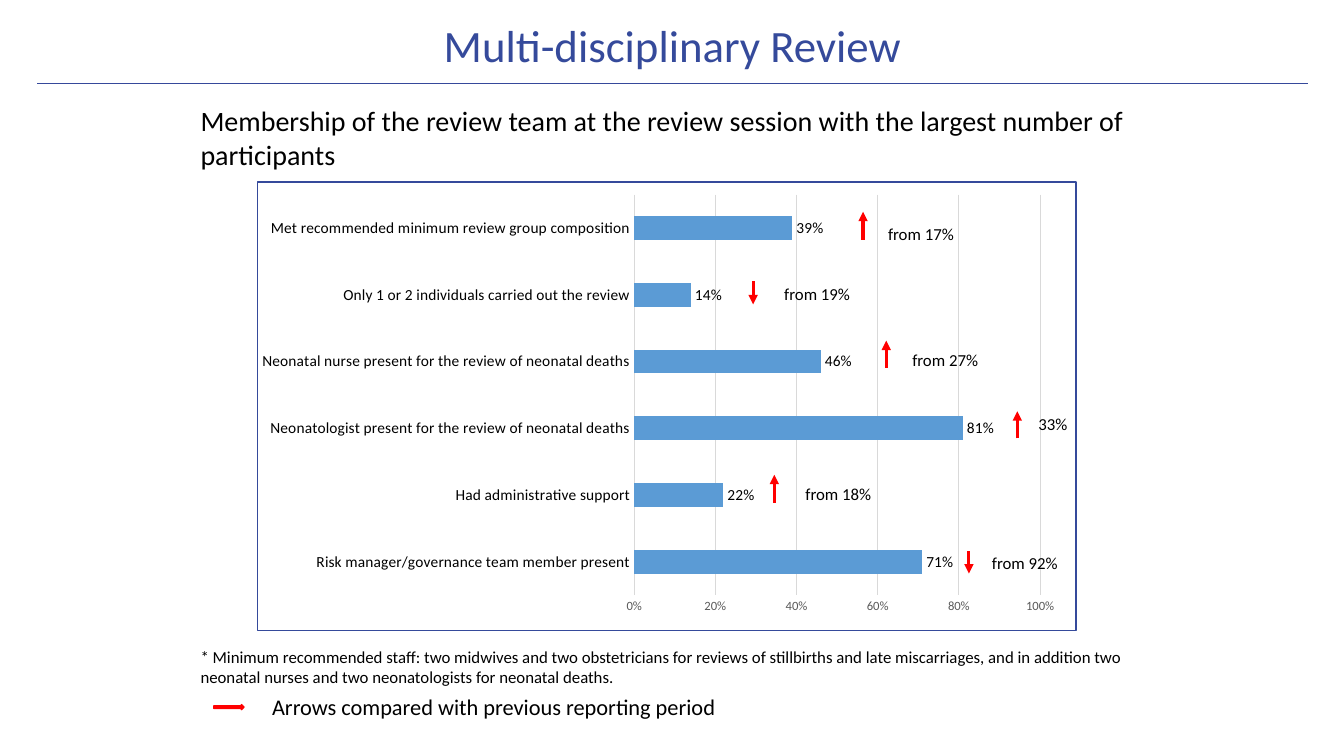
from dataclasses import dataclass

from lxml import etree
from pptx import Presentation
from pptx import util as u
from pptx.chart.data import CategoryChartData
from pptx.dml.color import RGBColor
from pptx.enum import chart as ch, shapes, text
from pptx.oxml import parse_xml
from pptx.oxml.ns import nsdecls, qn

Inches, Pt = u.Inches, u.Pt


@dataclass(frozen=True)
class Theme:
    font: str = "Calibri"
    navy: str = "354A9B"
    rule: str = "36499B"
    black: str = "000000"
    grey: str = "595959"
    grid: str = "D9D9D9"
    bar: str = "5B9BD5"
    red: str = "FF0000"
    title: int = 32
    heading: int = 20
    legend: int = 16
    note: int = 12
    label: int = 11
    axis: int = 9


T = Theme()

# Category, share now; listed from the bottom of the chart upwards
MEMBERSHIP = [
    ("Risk manager/governance team member present", 0.71),
    ("Had administrative support", 0.22),
    ("Neonatologist present for the review of neonatal deaths", 0.81),
    ("Neonatal nurse present for the review of neonatal deaths", 0.46),
    ("Only 1 or 2 individuals carried out the review", 0.14),
    ("Met recommended minimum review group composition", 0.39),
]

# Arrow x, start y, end y; then note text, left, top, width
CHANGES = [
    (8.56, 2.38, 2.1, "from 17%", 8.71, 2.17, 0.9),
    (7.47, 2.79, 3.02, "from 19%", 7.68, 2.77, 1.26),
    (8.79, 3.65, 3.38, "from 27%", 8.95, 3.42, 0.93),
    (10.09, 4.35, 4.08, "33%", 10.2, 4.06, 0.66),
    (7.68, 4.99, 4.71, "from 18%", 7.89, 4.75, 0.86),
    (9.61, 5.47, 5.69, "from 92%", 9.74, 5.43, 0.93),
]


def rgb(value):
    return RGBColor.from_string(value)


def style_font(font, size, color=T.black):
    font.name = T.font
    font.size = Pt(size)
    font.color.rgb = rgb(color)


def add_title(s, words):
    sp = s.shapes.title
    sp.left, sp.top, sp.width, sp.height = map(Inches, (1.42, 0.16, 10.5, 0.63))
    tf = sp.text_frame
    tf.text = words
    tf.vertical_anchor = text.MSO_ANCHOR.MIDDLE
    p = tf.paragraphs[0]
    p.alignment = text.PP_ALIGN.CENTER
    p.line_spacing = 0.9
    style_font(p.runs[0].font, T.title, T.navy)


def add_text(s, words, left, top, width, height, size):
    sp = s.shapes.add_textbox(*map(Inches, (left, top, width, height)))
    tf = sp.text_frame
    tf.word_wrap = True
    tf.text = words
    style_font(tf.paragraphs[0].runs[0].font, size)


def add_line(s, x1, y1, x2, y2, color, width, arrow=False):
    sp = s.shapes.add_connector(shapes.MSO_CONNECTOR.STRAIGHT,
                                *map(Inches, (x1, y1, x2, y2)))
    sp.line.color.rgb = rgb(color)
    sp.line.width = Pt(width)
    if arrow:
        ln = sp.line._get_or_add_ln()
        etree.SubElement(ln, qn("a:tailEnd"), type="triangle")
    etree.SubElement(sp._element.spPr, qn("a:effectLst"))


def add_legend_arrow(s):
    sp = s.shapes.add_shape(shapes.MSO_SHAPE.RIGHT_ARROW,
                            *map(Inches, (2.12, 6.99, 0.3, 0.05)))
    sp.shadow.inherit = False
    sp.fill.solid()
    sp.fill.fore_color.rgb = rgb(T.red)
    sp.line.color.rgb = rgb(T.red)
    sp.line.width = Pt(1)


def frame_chart(chart, x, y, w, h):
    """Fix the inner plot area and draw the border round the chart."""
    space = chart._chartSpace
    area = space.chart.plotArea
    for old in area.findall(qn("c:layout")):
        area.remove(old)
    area.insert(0, parse_xml(
        f'<c:layout {nsdecls("c")}><c:manualLayout><c:layoutTarget val="inner"/>'
        f'<c:xMode val="edge"/><c:yMode val="edge"/><c:x val="{x}"/><c:y val="{y}"/>'
        f'<c:w val="{w}"/><c:h val="{h}"/></c:manualLayout></c:layout>'))
    space.chart.addnext(parse_xml(
        f'<c:spPr {nsdecls("c", "a")}><a:noFill/><a:ln w="{Pt(1)}"><a:solidFill>'
        f'<a:srgbClr val="{T.navy}"/></a:solidFill></a:ln></c:spPr>'))


def add_membership_chart(s):
    data = CategoryChartData(number_format="0%")
    data.categories = [name for name, _ in MEMBERSHIP]
    data.add_series("Series 1", [share for _, share in MEMBERSHIP])
    chart = s.shapes.add_chart(ch.XL_CHART_TYPE.BAR_CLUSTERED,
                               *map(Inches, (2.55, 1.8, 8.13, 4.46)), data).chart
    chart.has_legend = False
    chart.has_title = False
    style_font(chart.font, 10)
    frame_chart(chart, 0.46, 0.028, 0.496, 0.894)

    # Bars and their values
    plot = chart.plots[0]
    plot.gap_width = 182
    plot.vary_by_categories = False
    fill = plot.series[0].format.fill
    fill.solid()
    fill.fore_color.rgb = rgb(T.bar)
    plot.has_data_labels = True
    labels = plot.data_labels
    labels.show_value = True
    labels.position = ch.XL_LABEL_POSITION.OUTSIDE_END
    labels.number_format = "0%"
    labels.number_format_is_linked = False
    style_font(labels.font, T.label)

    # Axes
    cat, val = chart.category_axis, chart.value_axis
    for axis in (cat, val):
        axis.major_tick_mark = axis.minor_tick_mark = ch.XL_TICK_MARK.NONE
    style_font(cat.tick_labels.font, T.label)
    style_font(val.tick_labels.font, T.axis, T.grey)
    val.minimum_scale, val.maximum_scale, val.major_unit = 0, 1, 0.2
    val.tick_labels.number_format = "0%"
    val.tick_labels.number_format_is_linked = False
    val.format.line.fill.background()
    val.has_major_gridlines = True
    for line in (cat.format.line, val.major_gridlines.format.line):
        line.color.rgb = rgb(T.grid)
        line.width = Pt(0.75)


def main():
    prs = Presentation()
    prs.slide_width, prs.slide_height = Inches(13.33), Inches(7.5)
    s = prs.slides.add_slide(prs.slide_layouts[5])

    # Heading
    add_title(s, "Multi-disciplinary Review")
    add_line(s, 0.37, 0.83, 12.97, 0.83, T.rule, 0.5)
    add_text(s, "Membership of the review team at the review session with the "
                "largest number of participants", 1.89, 0.98, 9.45, 0.78, T.heading)

    # Chart with changes since the previous period
    add_membership_chart(s)
    for x, start, end, words, left, top, width in CHANGES:
        add_line(s, x, start, x, end, T.red, 2.25, arrow=True)
        add_text(s, words, left, top, width, 0.3, T.note)

    # Footnote and arrow key
    add_text(s, "* Minimum recommended staff: two midwives and two obstetricians for "
                "reviews of stillbirths and late miscarriages, and in addition two "
                "neonatal nurses and two neonatologists for neonatal deaths.",
             1.89, 6.37, 9.45, 0.5, T.note)
    add_legend_arrow(s)
    add_text(s, "Arrows compared with previous reporting period",
             2.6, 6.83, 5.71, 0.37, T.legend)

    prs.save("out.pptx")


if __name__ == "__main__":
    main()
